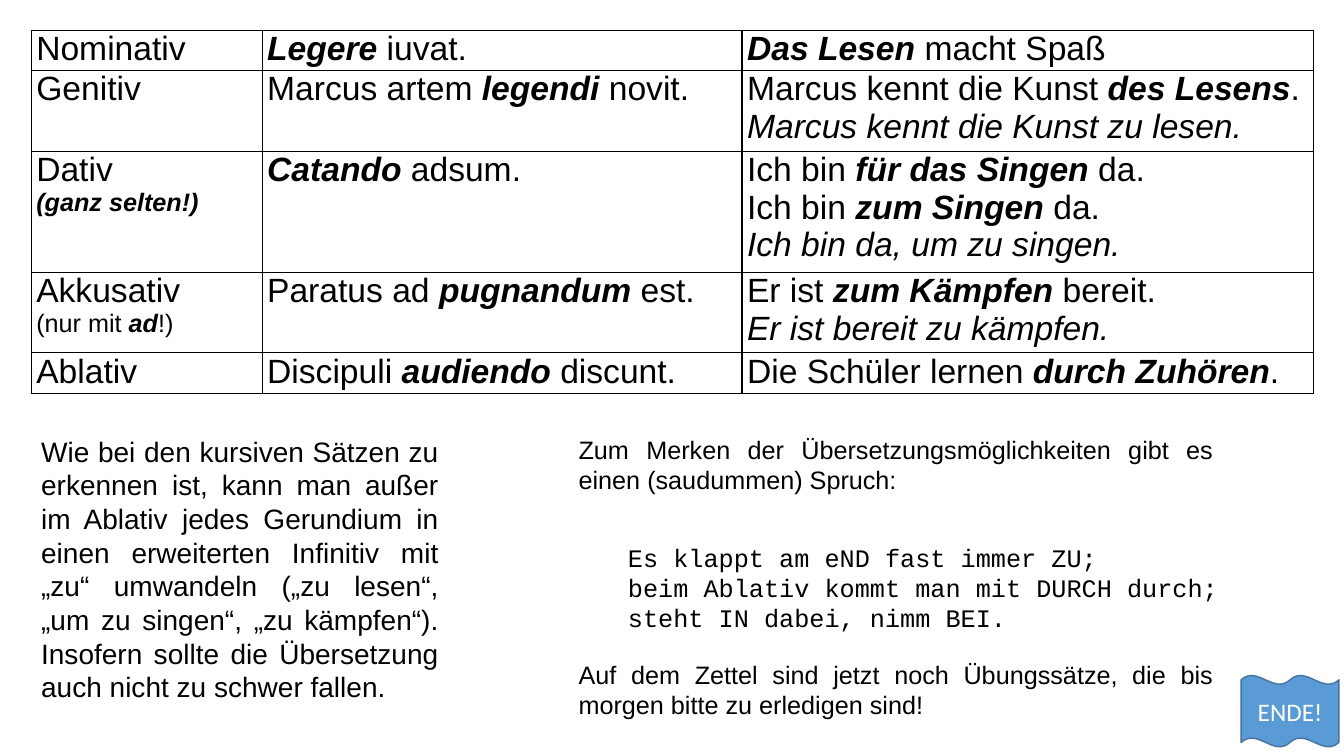
from lxml.etree import SubElement
from pptx import Presentation
from pptx.dml.color import RGBColor
from pptx.enum.shapes import MSO_SHAPE
from pptx.enum.text import MSO_ANCHOR as Anchor, MSO_AUTO_SIZE as AutoSize, PP_ALIGN as Align
from pptx.oxml.ns import qn
from pptx.util import Inches, Pt

# *…* = bold italic, leading _ = italic line
CASES = [
    (["Nominativ"], ["*Legere *iuvat."], ["*Das Lesen *macht Spaß"]),
    (["Genitiv"], ["Marcus artem *legendi* novit."],
     ["Marcus kennt die Kunst *des Lesens*.", "_Marcus kennt die Kunst zu lesen."]),
    (["Dativ", "*(ganz selten!)*"], ["*Catando *adsum."],
     ["Ich bin *für das Singen *da.", "Ich bin *zum Singen *da.", "_Ich bin da, um zu singen."]),
    (["Akkusativ", "(nur mit *ad*!)"], ["Paratus ad *pugnandum* est."],
     ["Er ist *zum Kämpfen *bereit.", "_Er ist bereit zu kämpfen."]),
    (["Ablativ"], ["Discipuli *audiendo *discunt."], ["Die Schüler lernen *durch Zuhören*."]),
]
COLUMN_WIDTHS = [2.29, 4.76, 5.67]
LINE_HEIGHT = 0.4
TABLE_LEFT, TABLE_TOP = 0.31, 0.3

NOTES = [
    ((0.31, 4.26, 4.14, 2.79),
     ["Wie bei den kursiven Sätzen zu erkennen ist, kann man außer im Ablativ jedes Gerundium in einen "
      "erweiterten Infinitiv mit „zu“ umwandeln („zu lesen“, „um zu singen“, „zu kämpfen“). "
      "Insofern sollte die Übersetzung auch nicht zu schwer fallen."], {"size": 20}),
    ((5.64, 4.26, 6.49, 0.71),
     ["Zum Merken der Übersetzungsmöglichkeiten gibt es einen (saudummen) Spruch:"], {}),
    ((5.64, 5.33, 6.67, 1.01),
     ["Es klappt am eND fast immer ZU;", "beim Ablativ kommt man mit DURCH durch;",
      "steht IN dabei, nimm BEI."], {"font": "Courier New", "indent": 0.49}),
    ((5.64, 6.49, 6.49, 0.71),
     ["Auf dem Zettel sind jetzt noch Übungssätze, die bis morgen bitte zu erledigen sind!"], {}),
]
END_LABEL, END_BOX = "ENDE!", (12.31, 6.7, 0.97, 0.71)


def color(value):
    return RGBColor.from_string(value)


def write_text(frame, lines, size=18, later_size=None, font="Arial", fill="000000",
               align=Align.LEFT, indent=0):
    for number, line in enumerate(lines):
        paragraph = frame.add_paragraph() if number else frame.paragraphs[0]
        paragraph.alignment = align
        if indent:
            paragraph._p.get_or_add_pPr().set("marL", str(Inches(indent)))
        slanted = line.startswith("_")
        for position, part in enumerate(line.removeprefix("_").split("*")):
            if part:
                run = paragraph.add_run()
                run.text = part
                strong = position % 2 == 1
                run.font.name = font
                run.font.size = Pt(later_size if number and later_size else size)
                run.font.bold = strong
                run.font.italic = strong or slanted
                run.font.color.rgb = color(fill)


def add_borders(cell):
    properties = cell._tc.get_or_add_tcPr()
    for side in ("a:lnL", "a:lnR", "a:lnT", "a:lnB"):
        border = SubElement(properties, qn(side), w=str(Pt(1)))
        solid = SubElement(border, qn("a:solidFill"))
        SubElement(solid, qn("a:srgbClr"), val="000000")


def add_case_table(slide):
    row_heights = [LINE_HEIGHT * max(map(len, case)) for case in CASES]
    table = slide.shapes.add_table(
        len(CASES), len(COLUMN_WIDTHS), Inches(TABLE_LEFT), Inches(TABLE_TOP),
        Inches(sum(COLUMN_WIDTHS)), Inches(sum(row_heights))).table
    table.first_row = table.horz_banding = False
    for column, width in zip(table.columns, COLUMN_WIDTHS):
        column.width = Inches(width)
    for row, height, case in zip(table.rows, row_heights, CASES):
        row.height = Inches(height)
        for index, (cell, lines) in enumerate(zip(row.cells, case)):
            cell.margin_left = cell.margin_right = Inches(0.05)
            cell.margin_top = cell.margin_bottom = 0
            add_borders(cell)
            cell.fill.background()
            write_text(cell.text_frame, lines, size=24, later_size=None if index else 18)


def add_note(slide, box, lines, text_format):
    frame = slide.shapes.add_textbox(*map(Inches, box)).text_frame
    frame.word_wrap = True
    frame.auto_size = AutoSize.SHAPE_TO_FIT_TEXT
    write_text(frame, lines, align=Align.JUSTIFY, **text_format)


def add_end_flag(slide):
    flag = slide.shapes.add_shape(MSO_SHAPE.DOUBLE_WAVE, *map(Inches, END_BOX))
    flag.shadow.inherit = False
    flag.fill.solid()
    flag.fill.fore_color.rgb = color("5B9BD5")
    flag.line.color.rgb = color("43739E")
    flag.line.width = Pt(1)
    flag.text_frame.vertical_anchor = Anchor.MIDDLE
    write_text(flag.text_frame, [END_LABEL], font="Calibri", fill="FFFFFF", align=Align.CENTER)


def main():
    presentation = Presentation()
    presentation.slide_width, presentation.slide_height = Inches(13.33), Inches(7.5)
    slide = presentation.slides.add_slide(presentation.slide_layouts[6])
    add_case_table(slide)
    for box, lines, text_format in NOTES:
        add_note(slide, box, lines, text_format)
    add_end_flag(slide)
    presentation.save("out.pptx")


if __name__ == "__main__":
    main()
